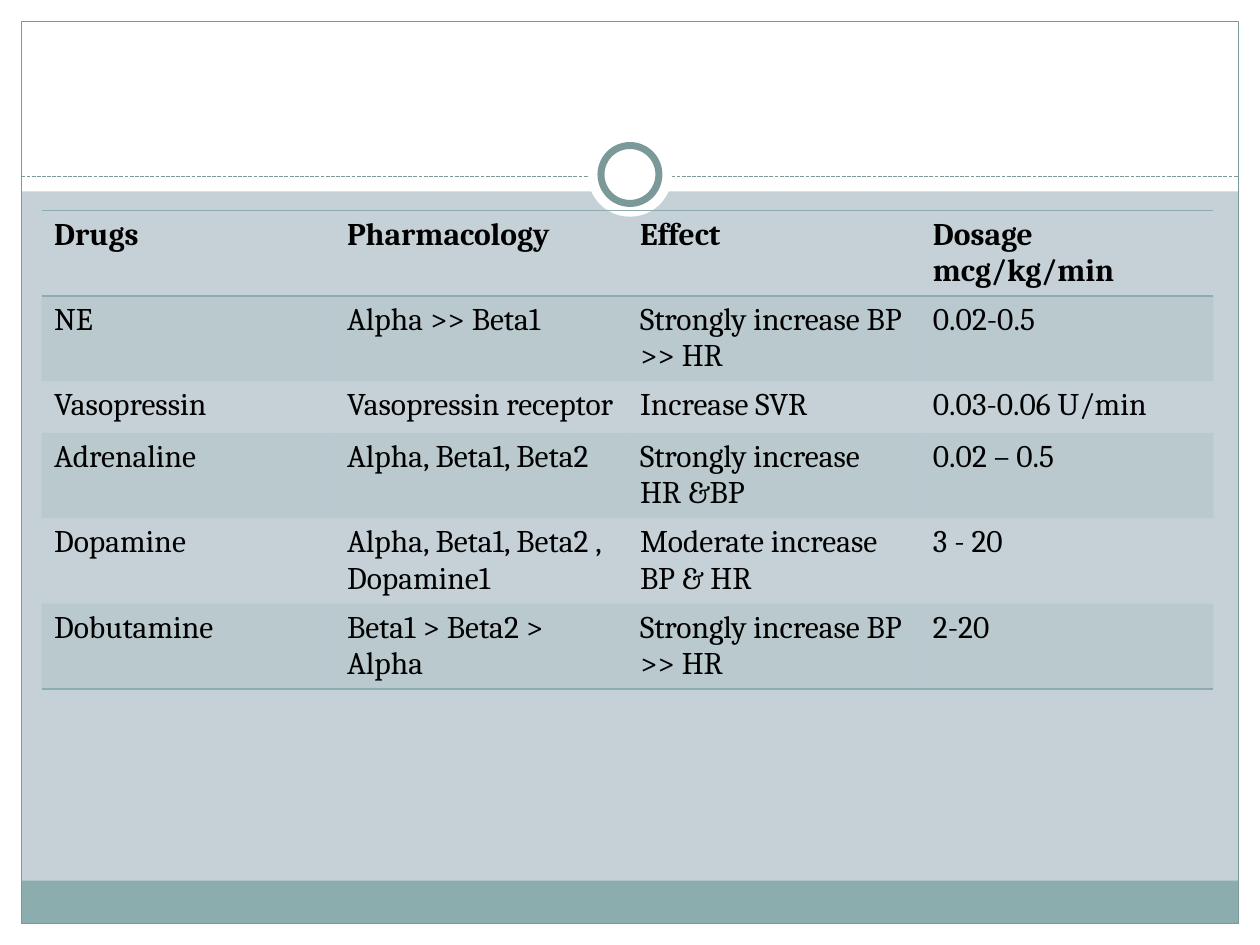
from dataclasses import dataclass

from lxml.etree import SubElement
from pptx import Presentation
from pptx.dml.color import RGBColor
from pptx.enum.dml import MSO_LINE
from pptx.enum.shapes import MSO_CONNECTOR, MSO_SHAPE
from pptx.oxml.ns import qn
from pptx.util import Inches, Pt


@dataclass(frozen=True)
class Theme:
    """Colours, font and sizes of the slide."""
    background: str = "C5D1D7"
    paper: str = "FFFFFF"
    accent: str = "8CADAE"
    frame: str = "7C999A"
    text: str = "000000"
    font: str = "Cambria"
    text_size: float = 18
    thin_line: float = 0.75
    ring_line: float = 4
    table_line: float = 1
    band_alpha: int = 20


THEME = Theme()
DRUGS = [
    ("Drugs", "Pharmacology", "Effect", "Dosage\nmcg/kg/min"),
    ("NE", "Alpha >> Beta1", "Strongly increase BP >> HR", "0.02-0.5"),
    ("Vasopressin", "Vasopressin receptor", "Increase SVR", "0.03-0.06 U/min"),
    ("Adrenaline", "Alpha, Beta1, Beta2", "Strongly increase HR &BP", "0.02 – 0.5"),
    ("Dopamine", "Alpha, Beta1, Beta2 , Dopamine1", "Moderate increase BP & HR", "3 - 20"),
    ("Dobutamine", "Beta1 > Beta2 > Alpha", "Strongly increase BP >> HR", "2-20"),
]


def add_box(slide, box, fill=None, line=None, width=THEME.thin_line, kind=MSO_SHAPE.RECTANGLE):
    """Add a preset shape with an optional fill and outline."""
    shape = slide.shapes.add_shape(kind, *map(Inches, box))
    shape.shadow.inherit = False
    if fill:
        shape.fill.solid()
        shape.fill.fore_color.rgb = RGBColor.from_string(fill)
    else:
        shape.fill.background()
    if line:
        shape.line.color.rgb = RGBColor.from_string(line)
        shape.line.width = Pt(width)
    else:
        shape.line.fill.background()


def add_frame(slide, box, margin, header, footer):
    """Draw the white margins, footer band and outline inside the page box."""
    left, top, width, height = box
    right, bottom = left + width, top + height
    for strip in (
        (left, bottom - margin, width, margin),
        (left, top, width, header),
        (left, top, margin, height),
        (right - margin, top, margin, height),
    ):
        add_box(slide, strip, fill=THEME.paper)
    inner = width - 2 * margin
    add_box(slide, (left + margin, bottom - margin - footer, inner, footer), fill=THEME.accent)
    add_box(slide, (left + margin, top + margin, inner, height - 2 * margin), line=THEME.frame)


def add_divider(slide, box):
    """Draw the dashed rule at the box top and the ring at the box centre."""
    left, top, width, height = box
    rule = slide.shapes.add_connector(
        MSO_CONNECTOR.STRAIGHT, *map(Inches, (left, 1.4, left + width, 1.4)))
    rule.line.color.rgb = RGBColor.from_string(THEME.frame)
    rule.line.width = Pt(THEME.thin_line)
    rule.line.dash_style = MSO_LINE.SQUARE_DOT
    SubElement(rule._element.spPr, qn("a:effectLst"))
    center_x, center_y = left + width / 2, top + height / 2
    for size, line in ((height, None), (0.46, THEME.frame)):
        circle = (center_x - size / 2, center_y - size / 2, size, size)
        add_box(slide, circle, THEME.paper, line, THEME.ring_line, MSO_SHAPE.OVAL)


def set_borders(cell, top, bottom):
    """Draw only the requested horizontal borders of a cell."""
    properties = cell._tc.get_or_add_tcPr()
    sides = {"lnL": False, "lnR": False, "lnT": top, "lnB": bottom}
    for position, (side, visible) in enumerate(sides.items()):
        border = SubElement(properties, qn(f"a:{side}"), w=str(Pt(THEME.table_line)))
        properties.insert(position, border)
        if visible:
            solid = SubElement(border, qn("a:solidFill"))
            SubElement(solid, qn("a:srgbClr"), val=THEME.accent)
        else:
            SubElement(border, qn("a:noFill"))


def fill_cell(cell, banded):
    """Tint a banded cell and clear any other."""
    if not banded:
        cell.fill.background()
        return
    cell.fill.solid()
    cell.fill.fore_color.rgb = RGBColor.from_string(THEME.accent)
    color = cell._tc.tcPr.find(f"{qn('a:solidFill')}/{qn('a:srgbClr')}")
    SubElement(color, qn("a:alpha"), val=str(THEME.band_alpha * 1000))


def add_drug_table(slide, box):
    """Place the drug table in the box with ruled header and banded rows."""
    table = slide.shapes.add_table(len(DRUGS), len(DRUGS[0]), *map(Inches, box)).table
    table.horz_banding = False
    ruled = {0, 1, len(DRUGS)}
    for row, values in enumerate(DRUGS):
        text_format = {"name": THEME.font, "size": Pt(THEME.text_size), "bold": row == 0}
        for column, value in enumerate(values):
            cell = table.cell(row, column)
            cell.text = value
            fill_cell(cell, row % 2 == 1)
            set_borders(cell, row in ruled, row + 1 in ruled)
            for paragraph in cell.text_frame.paragraphs:
                for run in paragraph.runs:
                    for name, setting in text_format.items():
                        setattr(run.font, name, setting)
                    run.font.color.rgb = RGBColor.from_string(THEME.text)


def main():
    """Build and save the slide."""
    presentation = Presentation()
    presentation.slide_width, presentation.slide_height = Inches(10), Inches(7.5)
    slide = presentation.slides.add_slide(presentation.slide_layouts[6])
    slide.background.fill.solid()
    slide.background.fill.fore_color.rgb = RGBColor.from_string(THEME.background)
    add_frame(slide, (0, 0, 10, 7.5), margin=0.17, header=1.52, footer=0.34)
    add_divider(slide, (0.17, 1.05, 9.66, 0.67))
    add_drug_table(slide, (0.33, 1.67, 9.3, 0.41 * len(DRUGS)))
    presentation.save("out.pptx")


if __name__ == "__main__":
    main()
